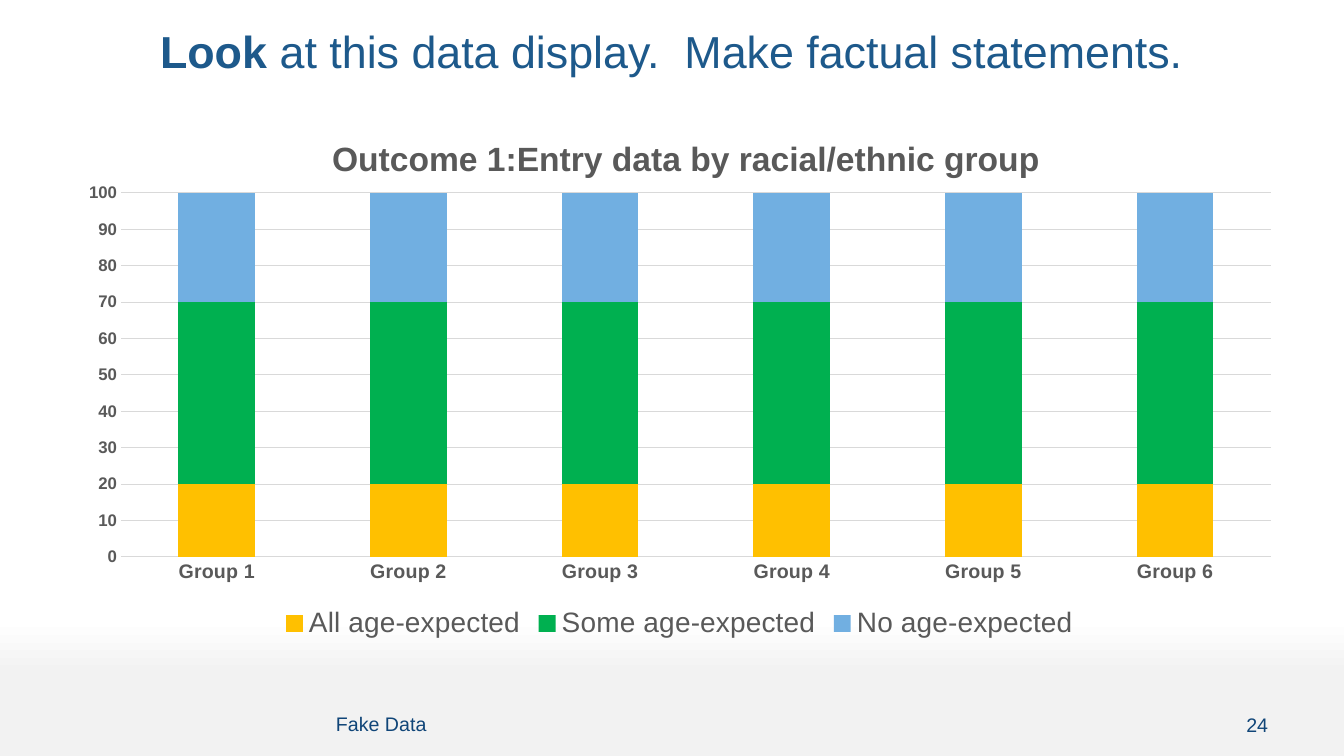
from lxml import etree
from pptx import Presentation
from pptx.chart.data import CategoryChartData
from pptx.dml.color import RGBColor
from pptx.enum.chart import XL_CHART_TYPE, XL_LEGEND_POSITION, XL_TICK_MARK
from pptx.enum.text import MSO_ANCHOR, PP_ALIGN
from pptx.oxml.ns import qn
from pptx.util import Emu, Pt

STACKED = XL_CHART_TYPE.COLUMN_STACKED
BOTTOM = XL_LEGEND_POSITION.BOTTOM
NO_TICK = XL_TICK_MARK.NONE
TOP, MIDDLE = MSO_ANCHOR.TOP, MSO_ANCHOR.MIDDLE
LEFT, CENTER, RIGHT = PP_ALIGN.LEFT, PP_ALIGN.CENTER, PP_ALIGN.RIGHT

# Content
HEADLINE = [("Look ", True), ("at this data display.  Make factual statements.", False)]
FOOTER = [("Fake Data", False)]
PAGE_NUMBER = [("24", False)]
CHART_TITLE = "Outcome 1:Entry data by racial/ethnic group"
GROUPS = [f"Group {n}" for n in range(1, 7)]
OUTCOMES = [  # name, percent in every group, colour
    ("All age-expected", 20, "FFC000"),
    ("Some age-expected", 50, "00B050"),
    ("No age-expected", 30, "71AFE1"),
]

# Boxes in px: left, top, width, height
SLIDE_SIZE = (1344, 756)
HEADLINE_BOX = (65, 25, 1214, 101)
CHART_BOX = (64, 110, 1231, 535)
PLOT_BOX = (121, 193, 1150, 364)
CHART_TITLE_BOX = (326, 131, 707, 38)
FOOTER_BOX = (326, 697, 816, 54)
PAGE_NUMBER_BOX = (1142, 697, 136, 55)

THEME = {
    "font": "Arial",
    "headline": "1D598B", "footer": "104578",
    "chart_text": "595959", "grid": "D9D9D9",
    "background": [(0.82, "FFFFFF"), (0.89, "F2F2F2")],
    "headline_size": 32, "chart_title_size": 24, "legend_size": 20,
    "category_size": 14, "value_size": 12, "footer_size": 14,
}


def px(length):
    return Emu(round(length * 914400 / 100.8))


def rgb(name):
    return RGBColor.from_string(THEME.get(name, name))


def style(font, size, color, bold=False):
    font.name = THEME["font"]
    font.size = Pt(THEME[size])
    font.color.rgb = rgb(color)
    font.bold = bold


def add_text(slide, box, runs, size, color, align=LEFT, anchor=MIDDLE, spacing=None):
    frame = slide.shapes.add_textbox(*map(px, box)).text_frame
    frame.word_wrap = True
    frame.vertical_anchor = anchor
    paragraph = frame.paragraphs[0]
    paragraph.alignment = align
    paragraph.line_spacing = spacing
    for words, bold in runs:
        run = paragraph.add_run()
        run.text = words
        style(run.font, size, color, bold)


def place_in_chart(part, index, box, inner=False):
    """Pin a chart part at a box given in slide px."""
    for old in part.findall(qn("c:layout")):
        part.remove(old)
    layout = etree.Element(qn("c:layout"))
    part.insert(index, layout)
    manual = etree.SubElement(layout, qn("c:manualLayout"))
    left, top, width, height = CHART_BOX
    settings = [("xMode", "edge"), ("yMode", "edge"),
                ("x", (box[0] - left) / width), ("y", (box[1] - top) / height)]
    if inner:
        settings.insert(0, ("layoutTarget", "inner"))
        settings += [("w", box[2] / width), ("h", box[3] / height)]
    for tag, value in settings:
        etree.SubElement(manual, qn(f"c:{tag}")).set("val", str(value))


def add_outcome_chart(slide):
    data = CategoryChartData()
    data.categories = GROUPS
    for name, percent, _ in OUTCOMES:
        data.add_series(name, [percent] * len(GROUPS))
    chart = slide.shapes.add_chart(STACKED, *map(px, CHART_BOX), data).chart
    chart.font.name = THEME["font"]

    # Title and legend
    chart.has_title = True
    title_frame = chart.chart_title.text_frame
    title_frame.text = CHART_TITLE
    style(title_frame.paragraphs[0].runs[0].font, "chart_title_size", "chart_text", True)
    chart.has_legend = True
    chart.legend.position = BOTTOM
    chart.legend.include_in_layout = False
    style(chart.legend.font, "legend_size", "chart_text")

    # Columns
    columns = chart.plots[0]
    columns.gap_width = 150
    columns.overlap = 100
    columns.vary_by_categories = False
    for series, (_, _, color) in zip(columns.series, OUTCOMES):
        series.format.fill.solid()
        series.format.fill.fore_color.rgb = rgb(color)

    # Axes
    groups, percents = chart.category_axis, chart.value_axis
    for axis, size in ((groups, "category_size"), (percents, "value_size")):
        axis.major_tick_mark = axis.minor_tick_mark = NO_TICK
        style(axis.tick_labels.font, size, "chart_text", True)
    percents.minimum_scale, percents.maximum_scale, percents.major_unit = 0, 100, 10
    percents.has_major_gridlines = True
    percents.format.line.fill.background()
    for line in (groups.format.line, percents.major_gridlines.format.line):
        line.color.rgb = rgb("grid")
        line.width = Pt(0.75)

    plot_area = chart._chartSpace.chart.plotArea
    place_in_chart(plot_area, 0, PLOT_BOX, inner=True)
    place_in_chart(chart.chart_title._element, 1, CHART_TITLE_BOX)


def main():
    deck = Presentation()
    deck.slide_width, deck.slide_height = map(px, SLIDE_SIZE)
    slide = deck.slides.add_slide(deck.slide_layouts[6])

    # Background fading to grey at the foot
    fill = slide.background.fill
    fill.gradient()
    fill.gradient_angle = 270
    for stop, (position, color) in zip(fill.gradient_stops, THEME["background"]):
        stop.position = position
        stop.color.rgb = rgb(color)

    add_text(slide, HEADLINE_BOX, HEADLINE, "headline_size", "headline",
             align=CENTER, anchor=TOP, spacing=0.9)
    add_outcome_chart(slide)
    add_text(slide, FOOTER_BOX, FOOTER, "footer_size", "footer")
    add_text(slide, PAGE_NUMBER_BOX, PAGE_NUMBER, "footer_size", "footer", align=RIGHT)
    deck.save("out.pptx")


if __name__ == "__main__":
    main()
